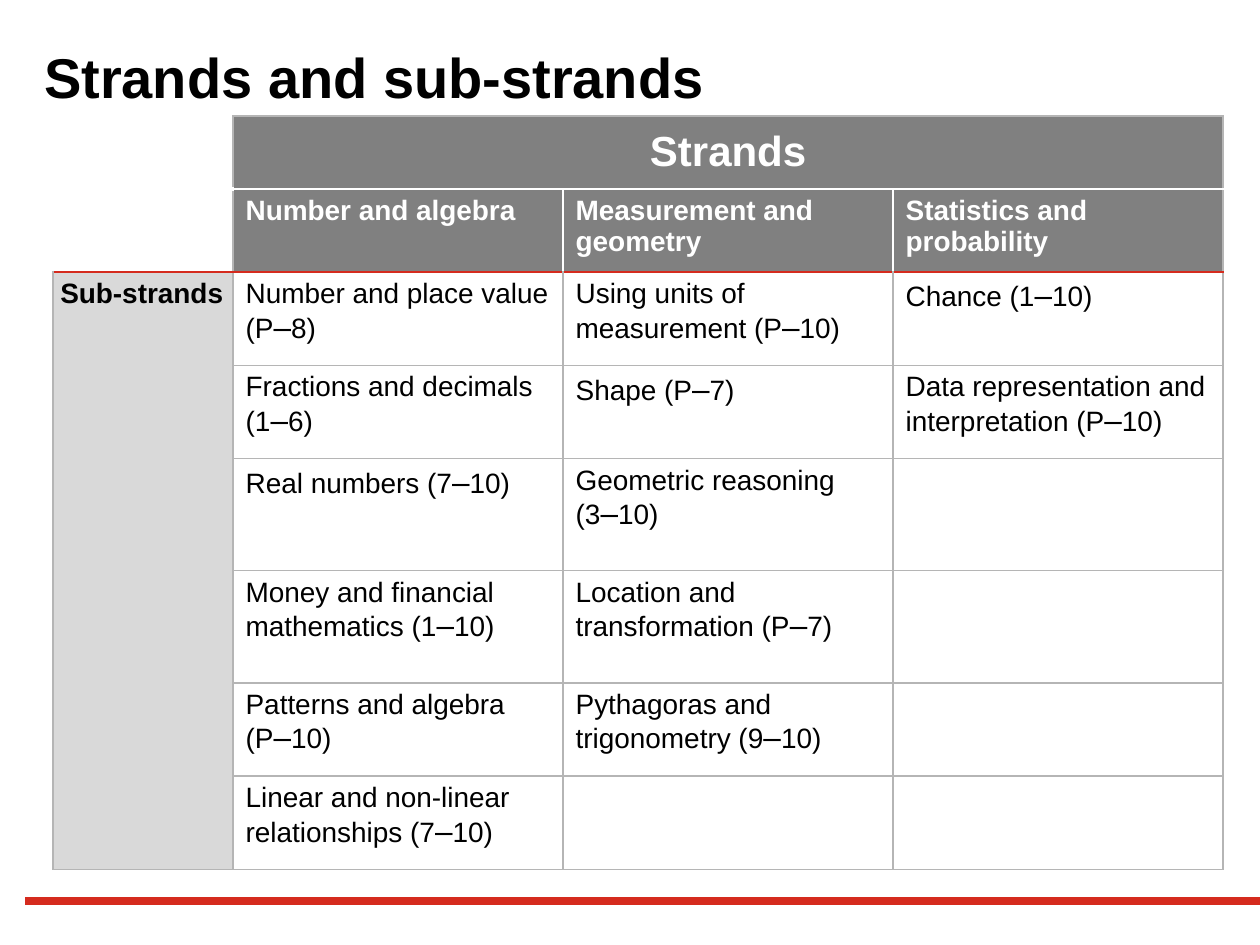
from lxml import etree
from pptx import Presentation
from pptx import util as u
from pptx.dml.color import RGBColor
from pptx.enum import shapes, text
from pptx.oxml import ns

BLACK = RGBColor(0x00, 0x00, 0x00)
WHITE = RGBColor(0xFF, 0xFF, 0xFF)
RED = RGBColor(0xD5, 0x2B, 0x1E)
HEADER_GREY = RGBColor(0x80, 0x80, 0x80)
SIDE_GREY = RGBColor(0xD9, 0xD9, 0xD9)
BORDER_GREY = RGBColor(0xB5, 0xB5, 0xB5)

FONT = "Arial"
PLAIN_TABLE = "{2D5ABB26-0587-4C30-8999-92F81FD0307C}"
COLUMN_WIDTHS = [103] + [188.6] * 3
ROW_HEIGHTS = [41.8, 47.5, 53.3, 53.3, 64.1, 64.1, 53.3, 53.3]

# "\n" starts a paragraph, "\v" breaks a line
HEADINGS = ["Number and algebra", "Measurement and geometry",
            "Statistics and probability"]
SUB_STRANDS = [
    ["Number and place value (P–8)", "Using units of measurement (P–10)",
     "Chance (1–10)"],
    ["Fractions and decimals (1–6)", "Shape (P–7)",
     "Data representation and interpretation (P–10)"],
    ["Real numbers (7–10)", "Geometric reasoning\n(3–10)", ""],
    ["Money and financial mathematics (1–10)",
     "Location and transformation (P–7)", ""],
    ["Patterns and algebra \v(P–10)", "Pythagoras and trigonometry (9–10)", ""],
    ["Linear and non-linear relationships (7–10)", "", ""],
]


def add_span(para, words, size, color, bold):
    span = para.add_run()
    span.text = words
    span.font.color.rgb = color
    values = {"name": FONT, "size": u.Pt(size), "bold": bold}
    for name, value in values.items():
        setattr(span.font, name, value)


def write(frame, words, size=16, color=BLACK, bold=False, align=None):
    """Write paragraphs, with en dashes set at 18 points."""
    for index, paragraph in enumerate(words.split("\n")):
        para = frame.add_paragraph() if index else frame.paragraphs[0]
        para.alignment = align
        for number, line in enumerate(paragraph.split("\v")):
            if number:
                para.add_line_break()
            before, dash, after = line.partition("–")
            for part in filter(None, (before, dash, after)):
                add_span(para, part, 18 if part == "–" else size, color, bold)


def add_title(page, words):
    box = page.shapes.add_textbox(u.Pt(25.2), u.Pt(20.2), u.Pt(669), u.Pt(34.6))
    values = {"word_wrap": True, "margin_left": 0, "margin_right": 0,
              "margin_top": u.Pt(4), "margin_bottom": 0}
    for name, value in values.items():
        setattr(box.text_frame, name, value)
    write(box.text_frame, words, 32, bold=True)


def add_rule(page):
    line = page.shapes.add_connector(
        shapes.MSO_CONNECTOR.STRAIGHT,
        u.Pt(14.4), u.Pt(514.8), u.Pt(720), u.Pt(514.8))
    line.line.color.rgb = RED
    line.line.width = u.Pt(4.2)
    etree.SubElement(line.element.spPr, ns.qn("a:effectLst"))


def edge_above(row, column):
    if row == 2:
        return RED, 1.5
    if row == 1:
        return WHITE, 1 if column else 3
    if row == 0 and column == 0:
        return WHITE, 1
    return BORDER_GREY, 1


def edge_left(row, column):
    white = row < 2 and column == 0 or row == 1 and column in (2, 3)
    return (WHITE if white else BORDER_GREY), 1


def set_borders(cell, row, column):
    last_row = row + (cell.span_height if cell.is_merge_origin else 1)
    last_column = column + (cell.span_width if cell.is_merge_origin else 1)
    edges = {"lnL": edge_left(row, column),
             "lnR": edge_left(row, last_column),
             "lnT": edge_above(row, column),
             "lnB": edge_above(last_row, column)}
    properties = cell._tc.get_or_add_tcPr()
    for index, (tag, (color, width)) in enumerate(edges.items()):
        border = etree.Element(ns.qn(f"a:{tag}"), w=str(u.Pt(width)))
        fill = etree.SubElement(border, ns.qn("a:solidFill"))
        etree.SubElement(fill, ns.qn("a:srgbClr"), val=str(color))
        properties.insert(index, border)


def fill_cell(cell, color):
    cell.fill.solid()
    cell.fill.fore_color.rgb = color


def add_strand_table(page):
    frame = page.shapes.add_table(
        len(ROW_HEIGHTS), len(COLUMN_WIDTHS), u.Pt(30.2), u.Pt(66.2),
        u.Pt(sum(COLUMN_WIDTHS)), u.Pt(sum(ROW_HEIGHTS)))
    table = frame.table
    table.first_row = table.horz_banding = False
    table._tbl.tblPr.find(ns.qn("a:tableStyleId")).text = PLAIN_TABLE
    for column, width in zip(table.columns, COLUMN_WIDTHS):
        column.width = u.Pt(width)
    for row, height in zip(table.rows, ROW_HEIGHTS):
        row.height = u.Pt(height)

    # Header rows
    strands = table.cell(0, 1)
    strands.merge(table.cell(0, 3))
    strands.vertical_anchor = text.MSO_ANCHOR.MIDDLE
    fill_cell(strands, HEADER_GREY)
    write(strands.text_frame, "Strands", 24, WHITE, True, text.PP_ALIGN.CENTER)
    for column, heading in enumerate(HEADINGS, 1):
        cell = table.cell(1, column)
        fill_cell(cell, HEADER_GREY)
        write(cell.text_frame, heading, color=WHITE, bold=True)

    # Side heading
    side = table.cell(2, 0)
    side.merge(table.cell(7, 0))
    side.margin_left = side.margin_right = u.Pt(4.3)
    fill_cell(side, SIDE_GREY)
    write(side.text_frame, "Sub-strands", bold=True)

    # Sub-strands
    for row, entries in enumerate(SUB_STRANDS, 2):
        for column, entry in enumerate(entries, 1):
            cell = table.cell(row, column)
            cell.fill.background()
            write(cell.text_frame, entry)

    # Borders
    for row in range(len(ROW_HEIGHTS)):
        for column in range(len(COLUMN_WIDTHS)):
            cell = table.cell(row, column)
            if not cell.is_spanned:
                set_borders(cell, row, column)


def main():
    deck = Presentation()
    deck.slide_width, deck.slide_height = u.Pt(720), u.Pt(540)
    page = deck.slides.add_slide(deck.slide_layouts[6])
    add_rule(page)
    add_strand_table(page)
    add_title(page, "Strands and sub-strands")
    deck.save("out.pptx")


if __name__ == "__main__":
    main()
